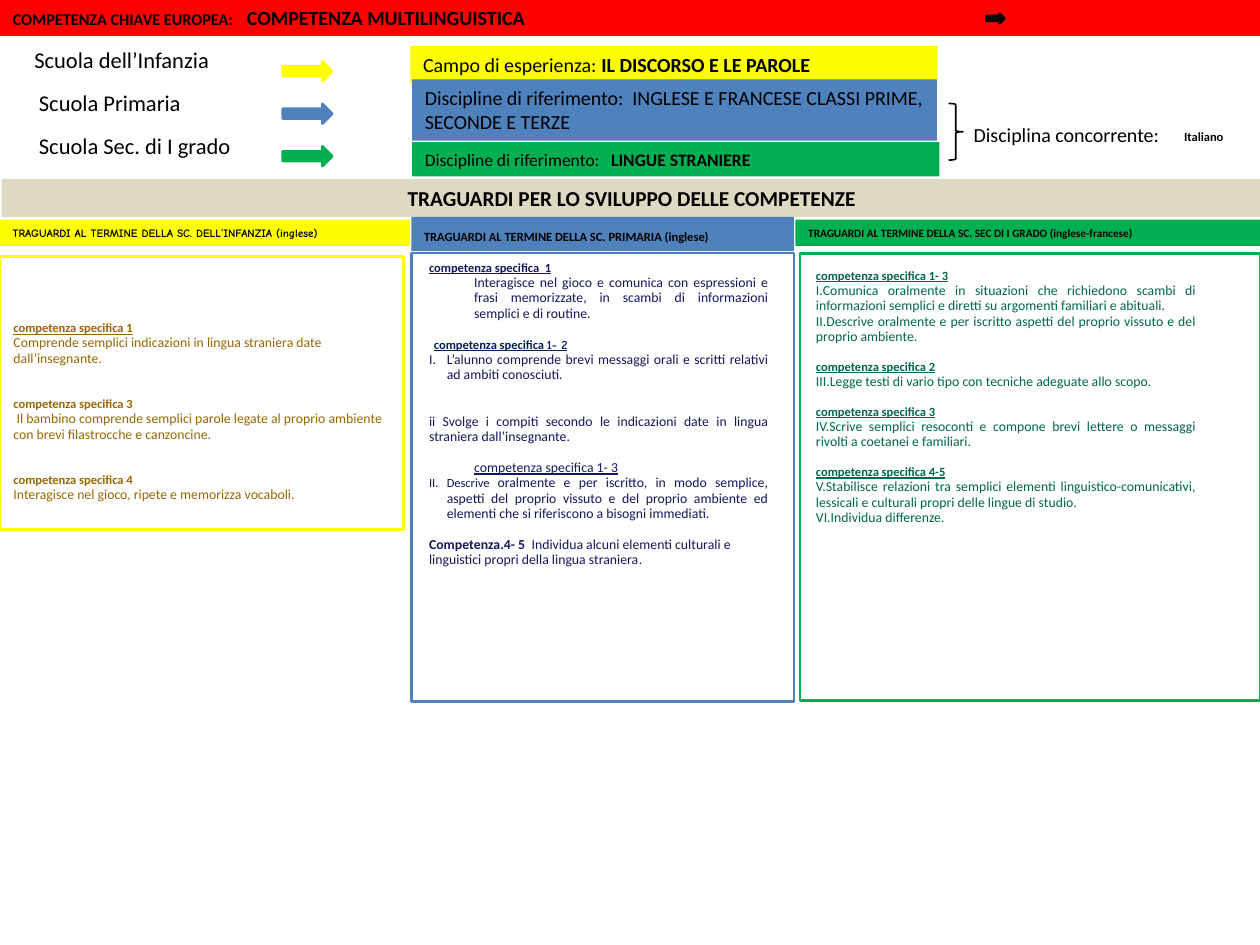
from lxml import etree
from pptx import Presentation
from pptx.dml.color import RGBColor
from pptx.enum.shapes import MSO_SHAPE
from pptx.enum.text import MSO_ANCHOR, MSO_AUTO_SIZE, PP_ALIGN
from pptx.oxml.ns import qn
from pptx.util import Cm, Pt

RECT, ARROW, BRACE = MSO_SHAPE.RECTANGLE, MSO_SHAPE.RIGHT_ARROW, MSO_SHAPE.RIGHT_BRACE
LEFT, CENTER, JUSTIFY = PP_ALIGN.LEFT, PP_ALIGN.CENTER, PP_ALIGN.JUSTIFY
TOP, MIDDLE = MSO_ANCHOR.TOP, MSO_ANCHOR.MIDDLE
COLORS = {
    "red": "FF0000", "yellow": "FFFF00", "blue": "4F81BD", "green": "00B050",
    "sand": "DDD9C3", "black": "000000", "brown": "996600", "navy": "16165D",
    "indigo": "191966", "midnight": "002060", "teal": "00664D",
}
MAIN, COMIC = "Calibri", "Comic Neue"
WIDE, NARROW = (0.36, 0.18), (0.25, 0.13)  # side and top insets
BLANK_LINE = 12.5  # points between groups of goals

# Runs are (text, size, style, colour, font); the last two are optional
TITLE = [("COMPETENZA CHIAVE EUROPEA:\t", 13, "b"), ("COMPETENZA MULTILINGUISTICA", 16, "b")]
SCHOOLS = [  # name, left, top, arrow colour
    ("Scuola dell’Infanzia", 0.61, 1.12, "yellow"),
    ("Scuola Primaria", 0.74, 2.34, "blue"),
    ("Scuola Sec. di I grado", 0.74, 3.56, "green"),
]
BANDS = [  # box, fill, alignment, tab stop, runs
    ((11.58, 1.3, 14.88, 1.04), "yellow", LEFT, None,
     [("Campo di esperienza: ", 16, ""), ("IL DISCORSO E LE PAROLE", 16, "b")]),
    ((11.63, 2.24, 14.81, 1.73), "blue", LEFT, None,
     [("Discipline di riferimento:  INGLESE E FRANCESE CLASSI PRIME, SECONDE E TERZE", 16, "")]),
    ((11.63, 4.01, 14.88, 0.97), "green", LEFT, 5.26,
     [("Discipline di riferimento:\t", 14, ""), ("LINGUE STRANIERE", 14, "b")]),
    ((0.05, 5.05, 35.56, 1.07), "sand", CENTER, None,
     [("TRAGUARDI PER LO SVILUPPO DELLE COMPETENZE", 17, "b")]),
    ((0, 6.2, 11.58, 0.74), "yellow", LEFT, None,
     [("TRAGUARDI AL TERMINE DELLA SC. DELL’INFANZIA (inglese)", 9, "b", "black", COMIC)]),
    ((11.61, 6.12, 10.8, 0.97), "blue", LEFT, None,
     [("TRAGUARDI AL TERMINE DELLA SC. PRIMARIA (inglese)", 10, "b"), (" ", 14, "b")]),
    ((22.45, 6.2, 13.13, 0.74), "green", LEFT, None,
     [("TRAGUARDI AL TERMINE DELLA SC. SEC DI I GRADO (inglese-francese)", 9, "b")]),
]
FRAMES = [
    ((0, 7.24, 11.4, 7.7), "yellow"),
    ((11.61, 7.14, 10.8, 12.67), "blue"),
    ((22.58, 7.16, 12.98, 12.62), "green"),
]
SIDE_NOTES = [
    ((27.23, 3.33, 7.98, 0.94), ("Disciplina concorrente:", 16, "")),
    ((33.17, 3.51, 2.08, 0.69), ("Italiano", 10, "b")),
]
# Goals are (blank lines before, left margin, roman number, alignment, runs)
INFANZIA = [
    (0, 0, 0, LEFT, [("competenza specifica 1", 10, "bu")]),
    (0, 0, 0, LEFT, [("Comprende semplici indicazioni in lingua straniera date dall’insegnante.", 11, "")]),
    (2, 0, 0, LEFT, [("competenza specifica 3", 10, "b")]),
    (0, 0, 0, LEFT, [(" Il bambino comprende semplici parole legate al proprio ambiente con brevi "
                      "filastrocche e canzoncine.", 11, "")]),
    (2, 0, 0, LEFT, [("competenza specifica 4", 10, "b")]),
    (0, 0, 0, LEFT, [("Interagisce nel gioco, ripete e memorizza vocaboli.", 11, "")]),
]
PRIMARIA = [
    (0, 0, 0, JUSTIFY, [("competenza specifica  1", 10, "bu")]),
    (0, 1.27, 0, JUSTIFY, [("Interagisce nel gioco e comunica con espressioni e frasi memorizzate, in "
                            "scambi di informazioni semplici e di routine.", 11, "")]),
    (1, 0, 0, JUSTIFY, [(" ", 11, "b", "indigo", COMIC),
                        ("competenza specifica ", 10, "bu", "midnight"),
                        ("1- 2", 10, "bu", "midnight", COMIC)]),
    (0, 0.5, 1, JUSTIFY, [("L’alunno comprende brevi messaggi orali e scritti relativi ad ambiti "
                           "conosciuti.", 11, "")]),
    (2, 0, 0, JUSTIFY, [("ii Svolge i compiti secondo le indicazioni date in lingua straniera "
                         "dall’insegnante.", 11, "")]),
    (1, 1.27, 0, JUSTIFY, [("competenza specifica 1- 3", 11, "u")]),
    (0, 0.5, 2, JUSTIFY, [("Descrive ", 10, ""),
                          ("oralmente e per iscritto, in modo semplice, aspetti del proprio vissuto e "
                           "del proprio ambiente ed elementi che si riferiscono a bisogni immediati.", 11, "")]),
    (1, 0, 0, LEFT, [("Competenza.4- 5  ", 11, "b"),
                     ("Individua alcuni elementi culturali e linguistici propri della lingua straniera", 11, ""),
                     (".", 11, "", "indigo")]),
]
SECONDARIA = [
    (0, 0, 0, JUSTIFY, [("competenza specifica 1- 3", 10, "bu")]),
    (0, 0, 1, JUSTIFY, [("Comunica oralmente in situazioni che richiedono scambi di informazioni semplici "
                         "e diretti su argomenti familiari e abituali.", 11, "")]),
    (0, 0, 2, JUSTIFY, [("Descrive oralmente e per iscritto aspetti del proprio vissuto e del proprio "
                         "ambiente.", 11, "")]),
    (1, 0, 0, JUSTIFY, [("competenza specifica 2", 10, "bu")]),
    (0, 0, 3, JUSTIFY, [("Legge testi di vario tipo con tecniche adeguate allo scopo.", 11, "")]),
    (1, 0, 0, JUSTIFY, [("competenza specifica 3", 10, "bu")]),
    (0, 0, 4, JUSTIFY, [("Scrive semplici resoconti e compone brevi lettere o messaggi rivolti a coetanei "
                         "e familiari.", 11, "")]),
    (1, 0, 0, JUSTIFY, [("competenza specifica 4-5", 10, "bu")]),
    (0, 0, 5, JUSTIFY, [("Stabilisce relazioni tra semplici elementi linguistico-comunicativi, lessicali "
                         "e culturali propri delle lingue di studio.", 11, "")]),
    (0, 0, 6, JUSTIFY, [("Individua differenze.", 11, "")]),
]
GOALS = [
    ((0.13, 8.95, 11.13, 5.99), "brown", INFANZIA),
    ((11.86, 7.24, 10.08, 9.58), "navy", PRIMARIA),
    ((22.78, 7.47, 11.23, 7.49), "teal", SECONDARIA),
]


def rgb(name):
    return RGBColor.from_string(COLORS[name])


def paint(sp, fill=None, line=None, width=0.75):
    if fill:
        sp.fill.solid()
        sp.fill.fore_color.rgb = rgb(fill)
    else:
        sp.fill.background()
    if line:
        sp.line.color.rgb = rgb(line)
        sp.line.width = Pt(width)
    else:
        sp.line.fill.background()


def add_shape(kind, box, fill=None, line=None, width=0.75):
    sp = s.shapes.add_shape(kind, *map(Cm, box))
    sp.shadow.inherit = False
    paint(sp, fill, line, width)
    return sp


def setup_frame(tf, insets, anchor):
    tf.word_wrap = True
    tf.auto_size = MSO_AUTO_SIZE.NONE
    tf.vertical_anchor = anchor
    tf.margin_left = tf.margin_right = Cm(insets[0])
    tf.margin_top = tf.margin_bottom = Cm(insets[1])


def add_textbox(box, insets):
    tf = s.shapes.add_textbox(*map(Cm, box)).text_frame
    setup_frame(tf, insets, TOP)
    return tf


def write(p, runs, align=LEFT, color="black", tab=None):
    p.alignment = align
    if tab:
        tabs = etree.SubElement(p._p.get_or_add_pPr(), qn("a:tabLst"))
        etree.SubElement(tabs, qn("a:tab"), pos=str(Cm(tab)), algn="l")
    for text, size, style, *extra in runs:
        r = p.add_run()
        r.text = text
        r.font.size = Pt(size)
        r.font.bold, r.font.underline = "b" in style, "u" in style
        r.font.color.rgb = rgb(extra[0] if extra else color)
        r.font.name = extra[1] if len(extra) > 1 else MAIN


def indent(p, margin, number, color):
    pPr = p._p.get_or_add_pPr()
    pPr.set("marL", str(Cm(margin)))
    pPr.set("indent", str(-Cm(margin or 0.2) if number else 0))
    if number:
        bullet_color = etree.SubElement(pPr, qn("a:buClr"))
        etree.SubElement(bullet_color, qn("a:srgbClr"), val=COLORS[color])
        etree.SubElement(pPr, qn("a:buAutoNum"), type="romanUcPeriod", startAt=str(number))


prs = Presentation()
prs.slide_width, prs.slide_height = Cm(35.56), Cm(26.67)
s = prs.slides.add_slide(prs.slide_layouts[5])

# Title bar
title = s.shapes.title
title.left, title.top, title.width, title.height = map(Cm, (0, -0.03, 35.56, 1.04))
paint(title, "red")
setup_frame(title.text_frame, WIDE, MIDDLE)
write(title.text_frame.paragraphs[0], TITLE, tab=6.61)
add_shape(ARROW, (27.84, 0.38, 0.51, 0.28), "black", "black", 2)

# Schools with their arrows
for i, (name, left, top, color) in enumerate(SCHOOLS):
    write(add_textbox((left, top, 7.2, 1.12), WIDE).paragraphs[0], [(name, 18, "")])
    add_shape(ARROW, (7.98, 1.73 + 1.2 * i, 1.4, 0.56), color, color, 2)

# Coloured bands
for box, fill, align, tab, runs in BANDS:
    tf = add_shape(RECT, box, fill).text_frame
    setup_frame(tf, WIDE, MIDDLE)
    write(tf.paragraphs[0], runs, align, tab=tab)

# Brace and concurrent subject
add_shape(BRACE, (26.77, 2.92, 0.41, 1.6), line="black", width=1.25)
for box, run in SIDE_NOTES:
    write(add_textbox(box, NARROW).paragraphs[0], [run])

# Column frames and goals
for box, color in FRAMES:
    add_shape(RECT, box, line=color, width=2.25)
for box, color, goals in GOALS:
    tf = add_textbox(box, NARROW)
    for i, (blanks, margin, number, align, runs) in enumerate(goals):
        p = tf.add_paragraph() if i else tf.paragraphs[0]
        p.line_spacing = 0.93
        p.space_before = Pt(BLANK_LINE * blanks)
        indent(p, margin, number, color)
        write(p, runs, align, color)

prs.save("out.pptx")
